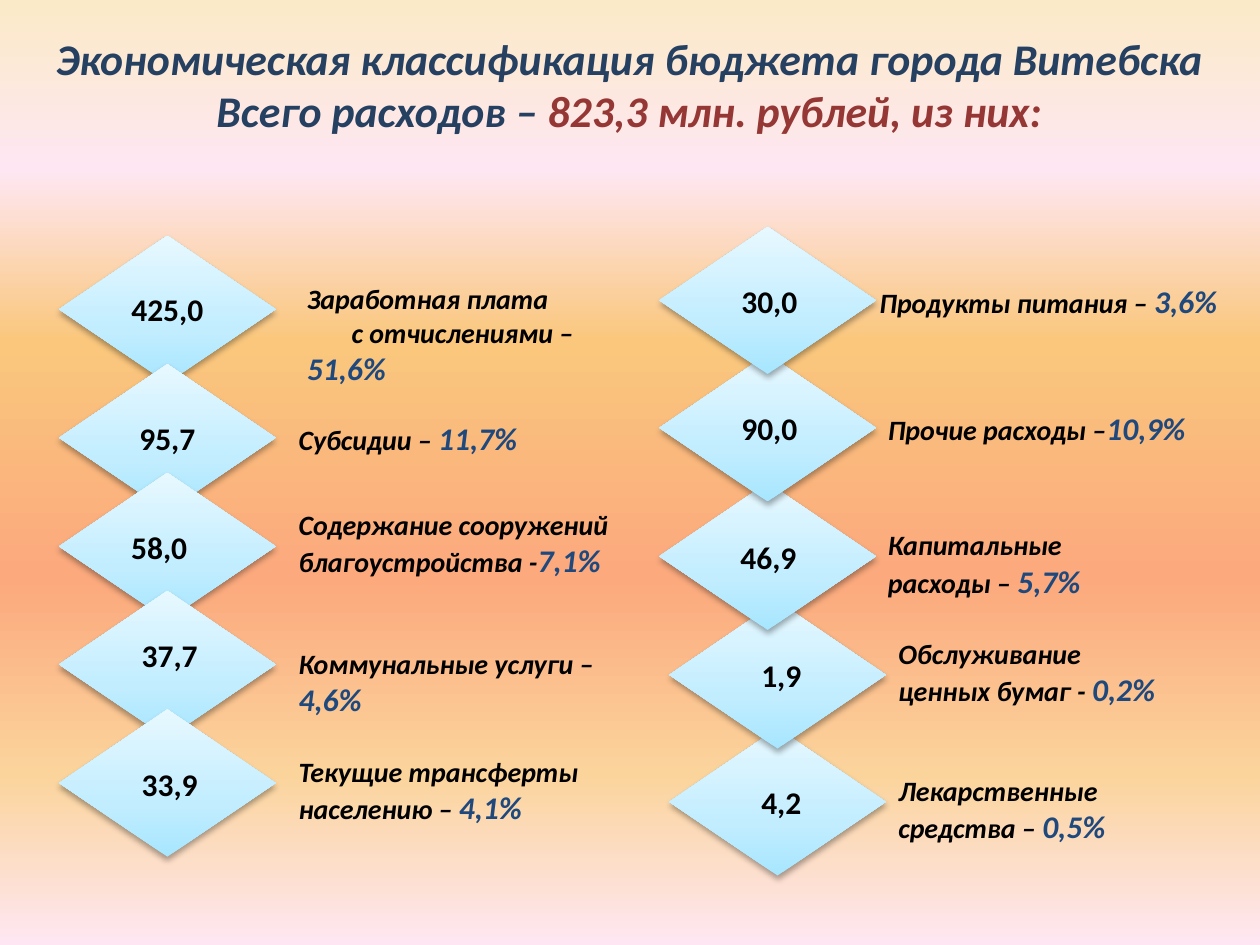
from lxml import etree
from pptx import Presentation
from pptx.dml.color import RGBColor
from pptx.enum.shapes import MSO_SHAPE
from pptx.enum.text import MSO_ANCHOR, MSO_AUTO_SIZE, PP_ALIGN
from pptx.oxml.ns import qn
from pptx.util import Cm, Pt

DIAMOND = MSO_SHAPE.FLOWCHART_DECISION
CENTER, LEFT = PP_ALIGN.CENTER, PP_ALIGN.LEFT
MIDDLE = MSO_ANCHOR.MIDDLE
FIT_SHAPE = MSO_AUTO_SIZE.SHAPE_TO_FIT_TEXT

BLACK = RGBColor(0x00, 0x00, 0x00)
NAVY = RGBColor(0x25, 0x40, 0x61)
MAROON = RGBColor(0x95, 0x37, 0x35)
BLUE = RGBColor(0x1F, 0x49, 0x7D)
CREAM = RGBColor(0xFB, 0xEA, 0xC7)
PINK = RGBColor(0xFE, 0xE7, 0xF2)
AMBER = RGBColor(0xFA, 0xC7, 0x7D)
CORAL = RGBColor(0xFB, 0xA9, 0x7D)
SAND = RGBColor(0xFB, 0xD4, 0x9C)
SKY = RGBColor(0xA7, 0xE6, 0xFF)
PALE_SKY = RGBColor(0xC1, 0xED, 0xFF)
ICE = RGBColor(0xE7, 0xF8, 0xFF)

SUNSET_STOPS = [(0, CREAM), (18, PINK), (36, AMBER), (61, CORAL), (82, SAND), (100, PINK)]
ICE_STOPS = [(0, SKY), (35, PALE_SKY), (100, ICE)]

# Each row: diamond (left, top), amount, amount box (left, top),
# label box (left, top, width, height), label lines, share
LEFT_ROWS = [
    ((1.19, 4.75), "425,0", None, (5.94, 5.56, 6.78, 1.7),
     ["Заработная плата", "с отчислениями – "], "51,6%"),
    ((1.19, 7.34), "95,7", None, (5.77, 8.33, 6.65, 1.02), ["Субсидии – "], "11,7%"),
    ((1.19, 9.53), "58,0", (2.18, 10.52), (5.77, 10.11, 7.82, 1.7),
     ["Содержание сооружений благоустройства -"], "7,1%"),
    ((1.19, 11.91), "37,7", (2.39, 12.7), (5.77, 12.9, 7.75, 1.7),
     ["Коммунальные услуги – "], "4,6%"),
    ((1.19, 14.3), "33,9", (2.39, 15.29), (5.77, 15.09, 6.25, 1.7),
     ["Текущие трансферты населению – "], "4,1%"),
]
RIGHT_ROWS = [
    ((13.29, 4.57), "30,0", (14.48, 5.56), (17.48, 5.56, 7.54, 1.02),
     ["Продукты питания – "], "3,6%"),
    ((13.29, 7.14), "90,0", (14.48, 8.13), (17.65, 8.13, 6.55, 1.02),
     ["Прочие расходы –"], "10,9%"),
    ((13.29, 9.73), "46,9", (14.46, 10.72), (17.65, 10.52, 6.93, 1.7),
     ["Капитальные", "расходы – "], "5,7%"),
    ((13.49, 12.12), "1,9", (14.72, 13.11), (17.86, 12.7, 6.15, 1.7),
     ["Обслуживание ценных бумаг - "], "0,2%"),
    ((13.49, 14.68), "4,2", (14.72, 15.67), (17.86, 15.47, 6.43, 1.7),
     ["Лекарственные средства – "], "0,5%"),
]


def add_run(paragraph, text, size=18, color=BLACK, bold=True, italic=False):
    run = paragraph.add_run()
    run.text = text
    font = run.font
    font.name, font.size = "Calibri", Pt(size)
    font.bold, font.italic = bold, italic
    font.color.rgb = color


def set_gradient(fill, element, stops, angle):
    """Fill with any number of stops; the angle runs counter-clockwise."""
    fill.gradient()
    fill.gradient_angle = angle
    stop_list = element.find(".//" + qn("a:gsLst"))
    for stop in list(stop_list):
        stop_list.remove(stop)
    for percent, color in stops:
        stop = etree.SubElement(stop_list, qn("a:gs"), pos=str(percent * 1000))
        etree.SubElement(stop, qn("a:srgbClr"), val=str(color))


def add_soft_shadow(shape):
    shape.shadow.inherit = False
    effects = shape._element.spPr.find(qn("a:effectLst"))
    shadow = etree.SubElement(effects, qn("a:outerShdw"), blurRad=str(Pt(3.5)),
                              dist=str(Pt(2.2)), dir="5400000", rotWithShape="0")
    color = etree.SubElement(shadow, qn("a:srgbClr"), val=str(BLACK))
    etree.SubElement(color, qn("a:alpha"), val="32000")


class BudgetSlide:
    def __init__(self, presentation):
        self.slide = presentation.slides.add_slide(presentation.slide_layouts[5])
        set_gradient(self.slide.background.fill, self.slide._element, SUNSET_STOPS, 270)

    def title(self, lead, total):
        title = self.slide.shapes.title
        title.left, title.top = Cm(0.58), Cm(0)
        title.width, title.height = Cm(24.2), Cm(3.38)
        title.text_frame.vertical_anchor = MIDDLE
        paragraph = title.text_frame.paragraphs[0]
        paragraph.alignment = CENTER
        for index, line in enumerate(lead):
            if index:
                paragraph.add_line_break()
            add_run(paragraph, line, size=25, color=NAVY, italic=True)
        add_run(paragraph, total, size=25, color=MAROON, italic=True)

    def diamond(self, left, top):
        shape = self.slide.shapes.add_shape(DIAMOND, Cm(left), Cm(top), Cm(4.37), Cm(2.97))
        set_gradient(shape.fill, shape._element, ICE_STOPS, 90)
        shape.line.fill.background()
        add_soft_shadow(shape)
        shape.text_frame.vertical_anchor = MIDDLE
        return shape

    def text_box(self, left, top, width, height):
        box = self.slide.shapes.add_textbox(Cm(left), Cm(top), Cm(width), Cm(height))
        box.text_frame.word_wrap = True
        box.text_frame.auto_size = FIT_SHAPE
        return box

    def amount(self, shape, text):
        paragraph = shape.text_frame.paragraphs[0]
        paragraph.alignment = CENTER
        add_run(paragraph, text)

    def label(self, place, lines, share, second_indent):
        frame = self.text_box(*place).text_frame
        paragraph = frame.paragraphs[0]
        for index, line in enumerate(lines):
            if index:
                paragraph = frame.add_paragraph()
                properties = paragraph._p.get_or_add_pPr()
                properties.set("indent", str(Cm(second_indent)))
            paragraph.alignment = LEFT
            add_run(paragraph, line, size=16, italic=True)
        add_run(paragraph, share, color=BLUE, italic=True)

    def column(self, rows, upper_in_front, second_indent=0):
        """Overlapping diamonds, then their amounts and labels."""
        diamonds = {}
        for row in reversed(rows) if upper_in_front else rows:
            diamonds[row[1]] = self.diamond(*row[0])
        for _, amount, amount_place, label_place, lines, share in rows:
            holder = self.text_box(*amount_place, 2.06, 1.02) if amount_place else diamonds[amount]
            self.amount(holder, amount)
            self.label(label_place, lines, share, second_indent)


def main():
    presentation = Presentation()
    presentation.slide_width, presentation.slide_height = Cm(25.4), Cm(19.05)
    budget = BudgetSlide(presentation)
    budget.title(["Экономическая классификация бюджета города Витебска", "Всего расходов – "],
                 "823,3 млн. рублей, из них:")
    budget.column(RIGHT_ROWS, upper_in_front=True)
    budget.column(LEFT_ROWS, upper_in_front=False, second_indent=0.9)
    presentation.save("out.pptx")


if __name__ == "__main__":
    main()
